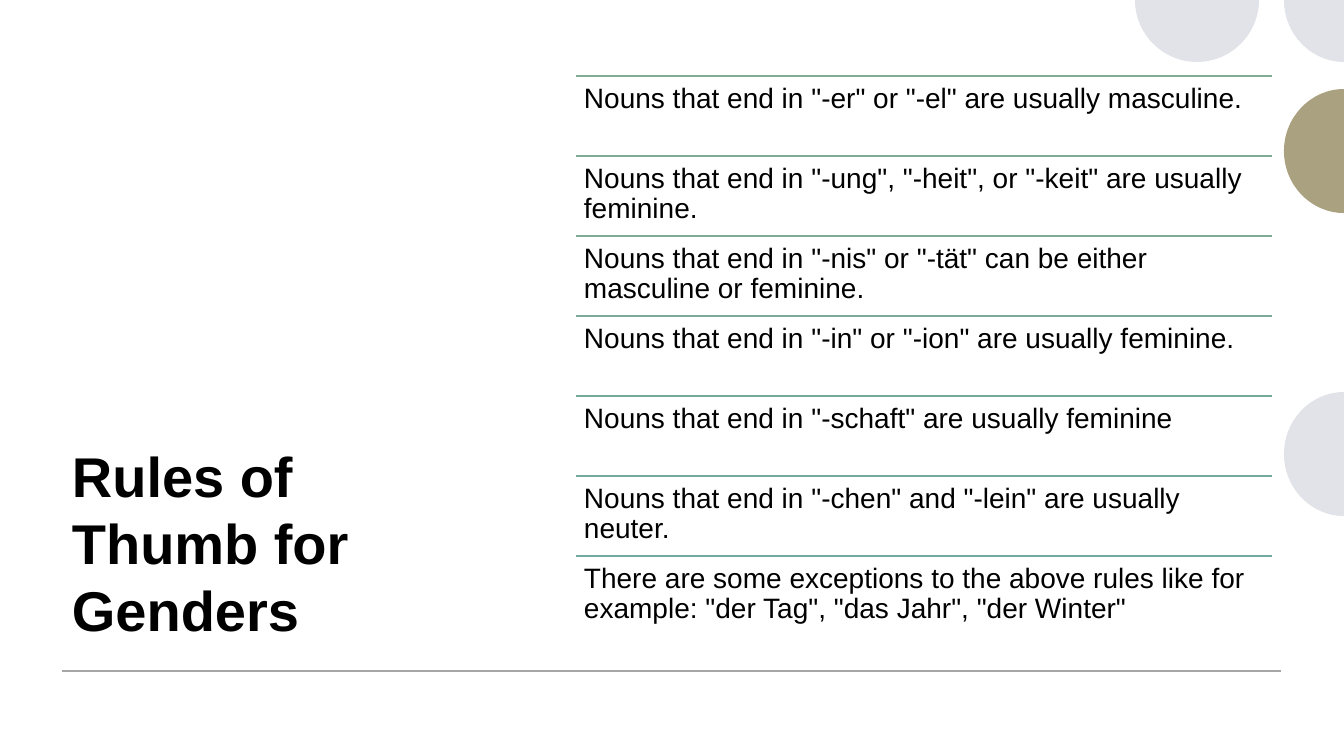
"""Build the slide with rules of thumb for German noun genders."""
import itertools

import pptx
import pptx.dml.color
import pptx.enum.shapes
import pptx.enum.text
import pptx.oxml
import pptx.oxml.ns
import pptx.util

PX = 12192000 / 1344
SLIDE_WIDTH, SLIDE_HEIGHT = 1344, 756
COLORS = {
    "text": "000000",
    "pale": "E2E3E8",
    "olive": "AAA180",
    "baseline": "A6A6A6",
    "er": "81AB94",
    "ung": "7FAB96",
    "nis": "7DAB98",
    "in": "7BAA9A",
    "schaft": "78AA9C",
    "chen": "76AA9F",
    "exceptions": "74AAA2",
}
RULES = {
    "er": 'Nouns that end in "-er" or "-el" are usually masculine.',
    "ung": 'Nouns that end in "-ung", "-heit", or "-keit" are usually feminine.',
    "nis": 'Nouns that end in "-nis" or "-tät" can be either masculine or feminine.',
    "in": 'Nouns that end in "-in" or "-ion" are usually feminine.',
    "schaft": 'Nouns that end in "-schaft" are usually feminine',
    "chen": 'Nouns that end in "-chen" and "-lein" are usually neuter.',
    "exceptions": "There are some exceptions to the above rules like for example: "
                  '"der Tag", "das Jahr", "der Winter"',
}

presentation = pptx.Presentation()
presentation.slide_width = round(SLIDE_WIDTH * PX)
presentation.slide_height = round(SLIDE_HEIGHT * PX)
slide = presentation.slides.add_slide(presentation.slide_layouts[6])


def add_text(text, box, size, line_spacing, inset_x, inset_y, anchor, bold=False):
    text_box = slide.shapes.add_textbox(*(round(length * PX) for length in box))
    frame = text_box.text_frame
    frame.word_wrap = True
    frame.vertical_anchor = anchor
    frame.margin_left = frame.margin_right = round(inset_x * PX)
    frame.margin_top = frame.margin_bottom = round(inset_y * PX)
    paragraph = frame.paragraphs[0]
    paragraph.text = text
    paragraph.line_spacing = line_spacing
    paragraph.font.name = "Arial"
    paragraph.font.size = pptx.util.Pt(size)
    paragraph.font.bold = bold
    paragraph.font.color.rgb = pptx.dml.color.RGBColor.from_string(COLORS["text"])


def add_rule_line(left, right, y, color):
    line = slide.shapes.add_connector(
        pptx.enum.shapes.MSO_CONNECTOR.STRAIGHT,
        round(left * PX), round(y * PX), round(right * PX), round(y * PX))
    line.line.width = pptx.util.Pt(1)
    line.line.color.rgb = pptx.dml.color.RGBColor.from_string(COLORS[color])
    line._element.spPr.append(pptx.oxml.parse_xml(
        f'<a:effectLst {pptx.oxml.ns.nsdecls("a")}/>'))


add_text("Rules of Thumb for Genders", (62, 274, 398, 374), 40, 1.0, 10, 5,
         pptx.enum.text.MSO_ANCHOR.BOTTOM, bold=True)

ARC = 0.55
EAST, SOUTH, WEST, NORTH = (1, 0), (0, 1), (-1, 0), (0, -1)
RADIUS_Y = 62
DOTS = [
    (1197, 0, 62, (EAST, SOUTH, WEST), "pale"),
    (SLIDE_WIDTH, 454, 60, (SOUTH, WEST, NORTH), "pale"),
    (SLIDE_WIDTH, 151, 60, (SOUTH, WEST, NORTH), "olive"),
    (SLIDE_WIDTH, 0, 60, (SOUTH, WEST), "pale"),
]
for center_x, center_y, radius_x, compass, color in DOTS:
    unit_points = [compass[0]]
    for (ax, ay), (bx, by) in itertools.pairwise(compass):
        unit_points += [(ax + ARC * bx, ay + ARC * by), (bx + ARC * ax, by + ARC * ay), (bx, by)]
    unit_points.append((0, 0))
    outline = [(round((center_x + radius_x * x) * PX), round((center_y + RADIUS_Y * y) * PX))
               for x, y in unit_points]
    builder = slide.shapes.build_freeform(*outline[0])
    builder.add_line_segments(outline[1:])
    dot = builder.convert_to_shape()
    segments = dot._element.xpath(".//a:lnTo")
    for first in range(0, 3 * (len(compass) - 1), 3):
        curve = pptx.oxml.parse_xml(f'<a:cubicBezTo {pptx.oxml.ns.nsdecls("a")}/>')
        segments[first].addprevious(curve)
        for segment in segments[first:first + 3]:
            curve.append(segment[0])
            segment.getparent().remove(segment)
    dot.shadow.inherit = False
    dot.fill.solid()
    dot.fill.fore_color.rgb = pptx.dml.color.RGBColor.from_string(COLORS[color])
    dot.line.fill.background()

add_rule_line(62, 1281, 671, "baseline")

RULES_LEFT, RULES_TOP, RULES_WIDTH, RULE_HEIGHT = 576, 76, 696, 80
for index, (ending, rule) in enumerate(RULES.items()):
    top = RULES_TOP + index * RULE_HEIGHT
    add_rule_line(RULES_LEFT, RULES_LEFT + RULES_WIDTH, top, ending)
    add_text(rule, (RULES_LEFT, top, RULES_WIDTH, RULE_HEIGHT), 20, 0.9, 8, 8,
             pptx.enum.text.MSO_ANCHOR.TOP)

presentation.save("out.pptx")
